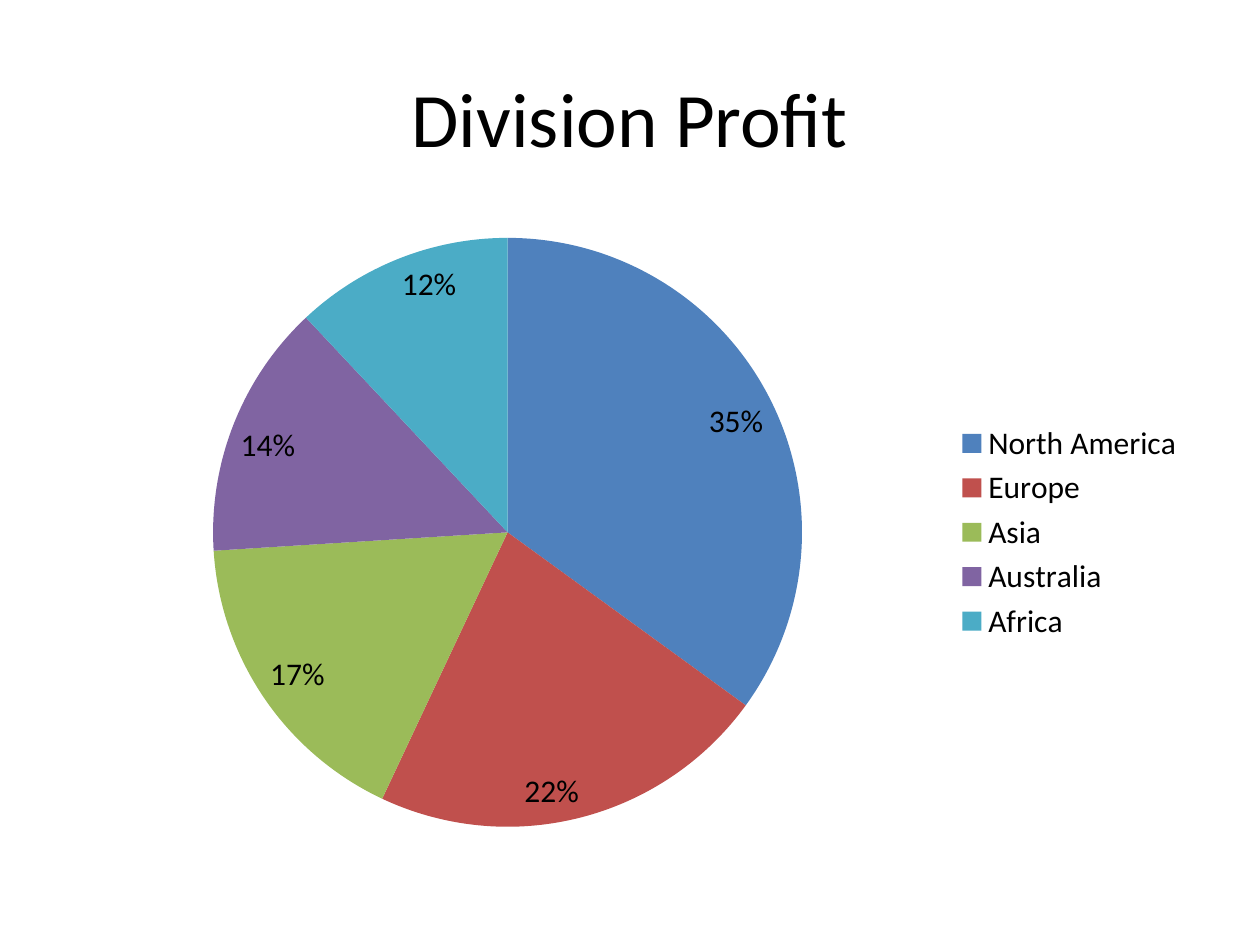
from pptx import Presentation
from pptx.chart.data import CategoryChartData
from pptx.dml.color import RGBColor
from pptx.enum.chart import XL_CHART_TYPE, XL_LABEL_POSITION, XL_LEGEND_POSITION
from pptx.enum.text import MSO_ANCHOR, PP_ALIGN
from pptx.util import Pt

PIE = XL_CHART_TYPE.PIE
INSIDE_END = XL_LABEL_POSITION.INSIDE_END
RIGHT = XL_LEGEND_POSITION.RIGHT
MIDDLE = MSO_ANCHOR.MIDDLE
CENTER = PP_ALIGN.CENTER

MARGIN = 36
CONTENT_WIDTH = 648

DIVISIONS = [
    ("North America", 0.35, "4F81BD"),
    ("Europe", 0.22, "C0504D"),
    ("Asia", 0.17, "9BBB59"),
    ("Australia", 0.14, "8064A2"),
    ("Africa", 0.12, "4BACC6"),
]


def rgb(value):
    return RGBColor.from_string(value)


class SlideBuilder:
    font_name = "Calibri"
    text_color = "000000"

    def __init__(self, slide):
        self.slide = slide

    def style_font(self, font, size):
        font.name = self.font_name
        font.size = Pt(size)
        font.color.rgb = rgb(self.text_color)

    def title(self, text, left, top, width, height, size=44):
        sp = self.slide.shapes.add_textbox(Pt(left), Pt(top), Pt(width), Pt(height))
        tf = sp.text_frame
        tf.word_wrap = True
        tf.vertical_anchor = MIDDLE
        p = tf.paragraphs[0]
        p.text = text
        p.alignment = CENTER
        self.style_font(p.font, size)

    def pie(self, rows, left, top, width, height, size=18):
        """Add a pie of (name, share, colour) rows with a legend on the right."""
        names, shares, colors = zip(*rows)
        data = CategoryChartData(number_format="0%")
        data.categories = names
        data.add_series("Series 1", shares)
        chart = self.slide.shapes.add_chart(
            PIE, Pt(left), Pt(top), Pt(width), Pt(height), data
        ).chart
        self.style_font(chart.font, size)
        chart.has_title = False
        chart.has_legend = True
        chart.legend.position = RIGHT
        chart.legend.include_in_layout = False

        plot = chart.plots[0]
        plot.vary_by_categories = True
        for i, color in enumerate(colors):
            fill = plot.series[0].points[i].format.fill
            fill.solid()
            fill.fore_color.rgb = rgb(color)

        plot.has_data_labels = True
        labels = plot.data_labels
        labels.show_value = True
        labels.show_percentage = False
        labels.position = INSIDE_END
        labels.number_format = "0%"
        labels.number_format_is_linked = False


def main():
    prs = Presentation()
    prs.slide_width, prs.slide_height = Pt(720), Pt(540)
    builder = SlideBuilder(prs.slides.add_slide(prs.slide_layouts[6]))
    builder.title("Division Profit", MARGIN, 21.6, CONTENT_WIDTH, 90)
    builder.pie(DIVISIONS, MARGIN, 126, CONTENT_WIDTH, 356.4)
    prs.save("out.pptx")


if __name__ == "__main__":
    main()
